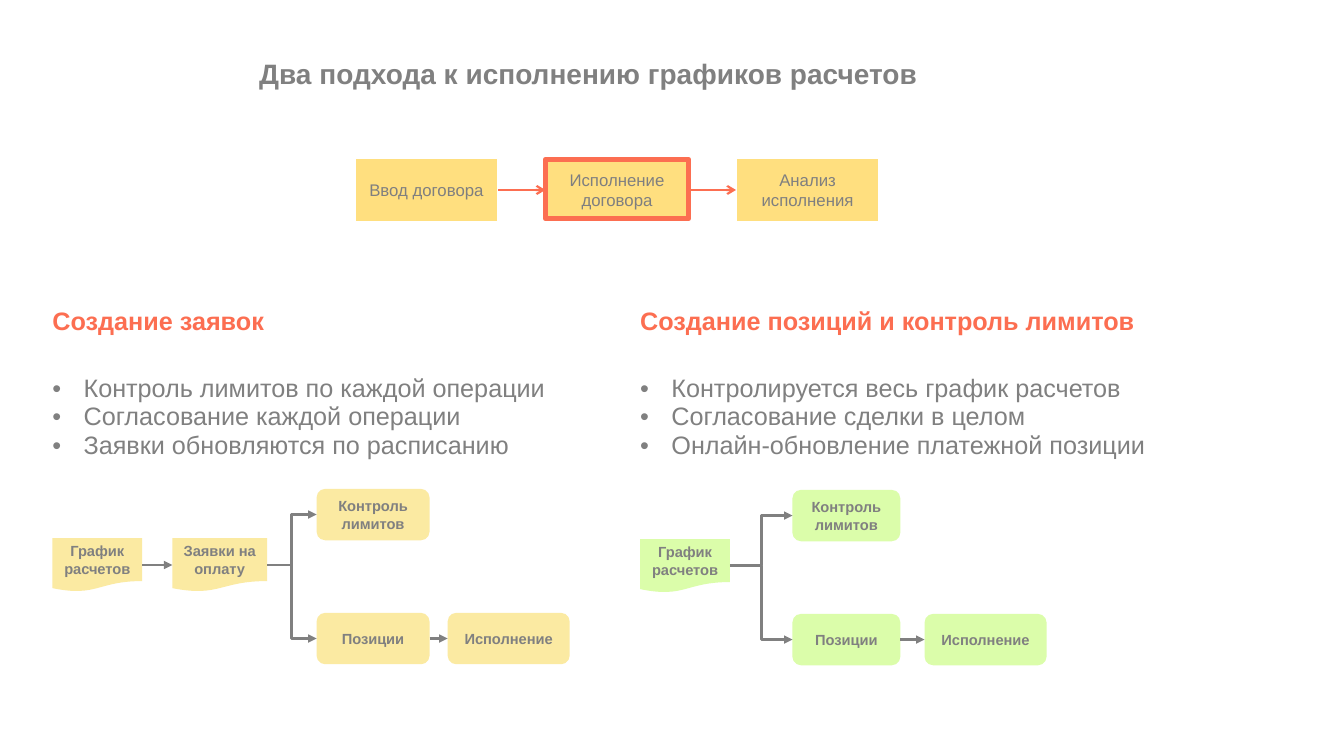
import pptx
import pptx.util
from lxml import etree
from pptx.dml.color import RGBColor
from pptx.enum.shapes import MSO_CONNECTOR, MSO_SHAPE
from pptx.enum.text import MSO_ANCHOR, MSO_AUTO_SIZE, PP_ALIGN
from pptx.oxml.ns import qn
from pptx.util import Inches

GREY = RGBColor(0x80, 0x80, 0x80)
STEP_GREY = RGBColor(0x7F, 0x7F, 0x7F)
ORANGE = RGBColor(0xFC, 0x6E, 0x51)
AMBER = RGBColor(0xFF, 0xC0, 0x00)
WHITE = RGBColor(0xFF, 0xFF, 0xFF)
CREAM = RGBColor(0xFB, 0xEA, 0xA2)
LIME = RGBColor(0xDB, 0xFD, 0xAA)

STEPS = ["Ввод договора", "Исполнение договора", "Анализ исполнения"]
APPROACHES = [
    ("Создание заявок", [
        "Контроль лимитов по каждой операции",
        "Согласование каждой операции",
        "Заявки обновляются по расписанию",
    ]),
    ("Создание позиций и контроль лимитов", [
        "Контролируется весь график расчетов",
        "Согласование сделки в целом",
        "Онлайн-обновление платежной позиции",
    ]),
]


def add_run(paragraph, wording, size, color, bold=False):
    """Append one formatted Arial run to the paragraph."""
    run = paragraph.add_run()
    run.text = wording
    run.font.name = "Arial"
    run.font.size = pptx.util.Pt(size)
    run.font.bold = bold
    run.font.color.rgb = color


def add_node(slide, preset, box, wording, fill, size, color, bold):
    """Draw a filled, borderless shape with centred text."""
    node = slide.shapes.add_shape(preset, *map(Inches, box))
    node.shadow.inherit = False
    node.fill.solid()
    node.fill.fore_color.rgb = fill
    node.line.fill.background()
    node.text_frame.word_wrap = True
    node.text_frame.vertical_anchor = MSO_ANCHOR.MIDDLE
    paragraph = node.text_frame.paragraphs[0]
    paragraph.alignment = PP_ALIGN.CENTER
    add_run(paragraph, wording, size, color, bold)
    return node


def add_arrow(slide, source, target, color, width, head, kind=MSO_CONNECTOR.STRAIGHT):
    """Join the right side of one node to the left side of another."""
    arrow = slide.shapes.add_connector(kind, 0, 0, 0, 0)
    arrow.begin_connect(source, 3)
    arrow.end_connect(target, 1)
    arrow.line.color.rgb = color
    arrow.line.width = pptx.util.Pt(width)
    etree.SubElement(arrow.line._get_or_add_ln(), qn("a:tailEnd"), type=head)
    etree.SubElement(arrow._element.spPr, qn("a:effectLst"))


def add_title(slide, left, top, width, height):
    """Place the slide title in its placeholder."""
    title = slide.shapes.title
    title.left, title.top = Inches(left), Inches(top)
    title.width, title.height = Inches(width), Inches(height)
    frame = title.text_frame
    frame.auto_size = MSO_AUTO_SIZE.NONE
    frame.vertical_anchor = MSO_ANCHOR.MIDDLE
    paragraph = frame.paragraphs[0]
    paragraph.alignment = PP_ALIGN.LEFT
    paragraph.line_spacing = 0.8
    add_run(paragraph, "Два подхода к исполнению графиков расчетов", 20, GREY, True)


def add_contract_steps(slide, left, top, width, height, pitch):
    """Draw the contract steps in a row and frame the current one."""
    steps = []
    for index, wording in enumerate(STEPS):
        box = (left + index * pitch, top, width, height)
        step = add_node(slide, MSO_SHAPE.RECTANGLE, box, wording, AMBER, 12, STEP_GREY, False)
        etree.SubElement(step.fill._xPr.find(qn("a:solidFill"))[0], qn("a:alpha"), val="50000")
        step.line.color.rgb = WHITE
        step.line.width = pptx.util.Pt(1.5)
        steps.append(step)
    current_box = (left + pitch, top + 0.01, width, height - 0.04)
    current = slide.shapes.add_shape(MSO_SHAPE.RECTANGLE, *map(Inches, current_box))
    current.shadow.inherit = False
    current.fill.background()
    current.line.color.rgb = ORANGE
    current.line.width = pptx.util.Pt(3.5)
    for source, target in zip(steps, steps[1:]):
        add_arrow(slide, source, target, ORANGE, 1.5, "arrow")


def add_bullet(paragraph, wording):
    """Write one bulleted advantage with a hanging indent."""
    properties = paragraph._p.get_or_add_pPr()
    properties.set("marL", str(Inches(0.31)))
    properties.set("indent", str(-Inches(0.31)))
    etree.SubElement(properties, qn("a:buFont"), typeface="Arial")
    etree.SubElement(properties, qn("a:buChar"), char="•")
    add_run(paragraph, wording, 18, GREY)


def add_approaches(slide, left, top, width, row_heights):
    """Set the two approaches side by side in a plain table."""
    box = (left, top, width, sum(row_heights))
    comparison = slide.shapes.add_table(2, len(APPROACHES), *map(Inches, box)).table
    comparison.horz_banding = False
    for row, height in zip(comparison.rows, row_heights):
        row.height = Inches(height)
    for cell in comparison.iter_cells():
        cell.fill.background()
        cell.margin_left = cell.margin_right = Inches(0.07)
        cell.margin_top = cell.margin_bottom = Inches(0.04)
    for column, (heading, advantages) in enumerate(APPROACHES):
        heading_frame = comparison.cell(0, column).text_frame
        add_run(heading_frame.paragraphs[0], heading, 18, ORANGE, True)
        advantages_frame = comparison.cell(1, column).text_frame
        for index, advantage in enumerate(advantages):
            paragraph = advantages_frame.add_paragraph() if index else advantages_frame.paragraphs[0]
            add_bullet(paragraph, advantage)


def add_settlement_flow(slide, left, top, fill, documents, branch, execution_offset):
    """Draw documents that branch into limit control and positions."""
    def node(preset, offset, drop, width, height, wording):
        box = (left + offset, top + drop, width, height)
        return add_node(slide, preset, box, wording, fill, 10.5, GREY, True)

    papers = [node(MSO_SHAPE.FLOWCHART_DOCUMENT, offset, 0.49, width, 0.53, wording)
              for offset, width, wording in documents]
    branch_offset, branch_width = branch
    rounded = MSO_SHAPE.ROUNDED_RECTANGLE
    limits = node(rounded, branch_offset, 0, branch_width, 0.51, "Контроль лимитов")
    positions = node(rounded, branch_offset, 1.23, branch_width, 0.51, "Позиции")
    execution = node(rounded, execution_offset, 1.23, 1.21, 0.51, "Исполнение")
    for source, target in [*zip(papers, papers[1:]), (positions, execution)]:
        add_arrow(slide, source, target, GREY, 2, "triangle")
    for target in (limits, positions):
        add_arrow(slide, papers[-1], target, GREY, 2, "triangle", MSO_CONNECTOR.ELBOW)


def main():
    """Build and save the slide."""
    presentation = pptx.Presentation()
    presentation.slide_width = Inches(13.33)
    presentation.slide_height = Inches(7.5)
    slide = presentation.slides.add_slide(presentation.slide_layouts[5])
    add_title(slide, 2.47, 0.17, 7.03, 1.18)
    add_contract_steps(slide, 3.52, 1.57, 1.42, 0.63, 1.89)
    add_approaches(slide, 0.45, 3.01, 11.66, (0.67, 1.87))
    schedule = (0, 0.89, "График расчетов")
    requests = (1.19, 0.94, "Заявки на оплату")
    add_settlement_flow(slide, 0.52, 4.85, CREAM, [schedule, requests], (2.62, 1.12), 3.92)
    add_settlement_flow(slide, 6.35, 4.86, LIME, [schedule], (1.51, 1.07), 2.82)
    presentation.save("out.pptx")


if __name__ == "__main__":
    main()
